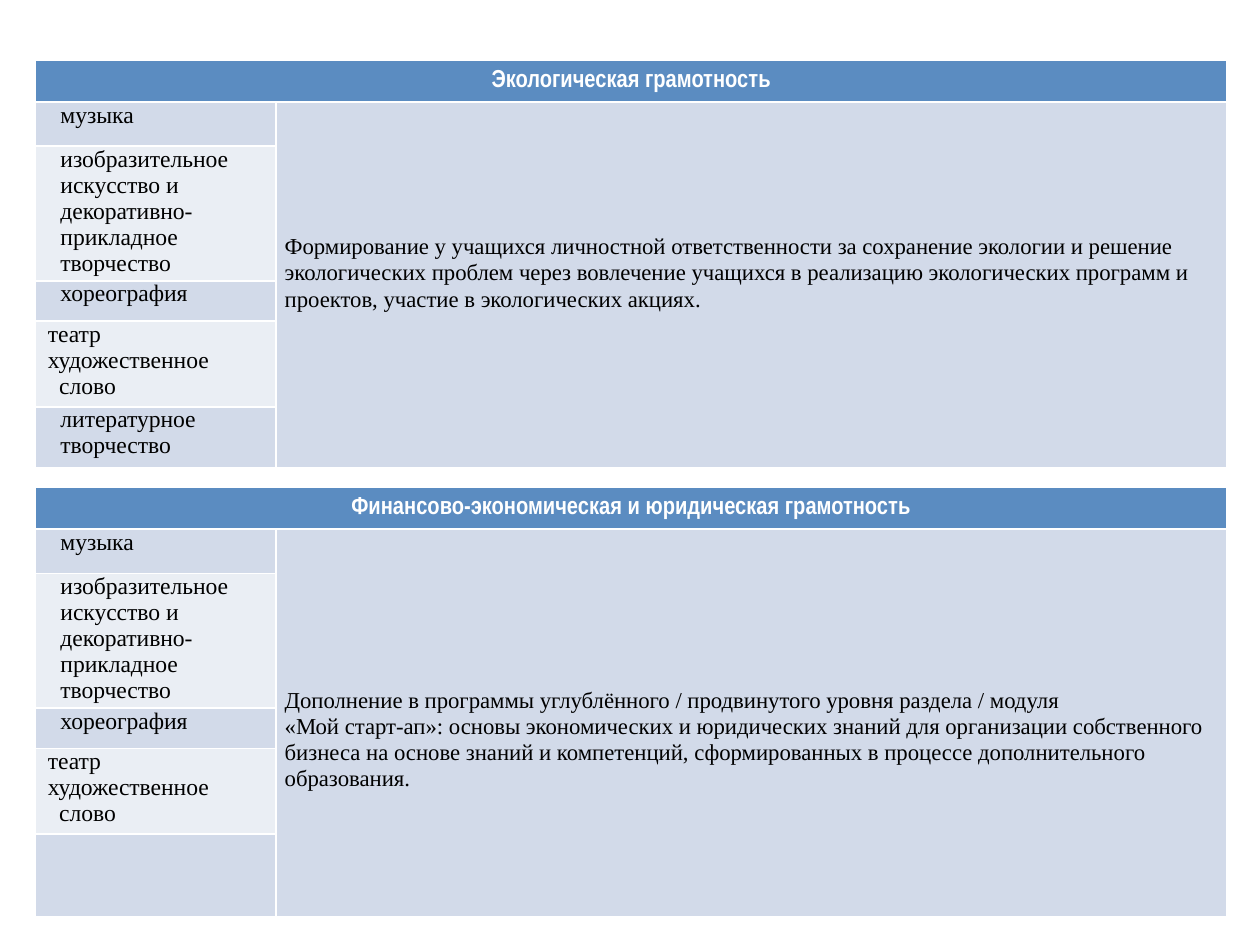
from pptx import Presentation
from pptx.dml.color import RGBColor
from pptx.enum.text import MSO_ANCHOR, PP_ALIGN
from pptx.util import Inches, Pt

CENTER, LEFT = PP_ALIGN.CENTER, PP_ALIGN.LEFT
TOP, MIDDLE = MSO_ANCHOR.TOP, MSO_ANCHOR.MIDDLE

COLORS = {
    "header": "5B8CC1",
    "dark_band": "D2DAE9",
    "light_band": "EAEEF4",
    "white": "FFFFFF",
    "black": "000000",
}
COLUMN_WIDTHS = [1.91, 7.55]
UPPER_ROWS = [0.33, 0.35, 1.07, 0.32, 0.68]
LINE = 15

MUSIC = [("музыка", 0.2)]
ART = [
    ("изобразительное искусство и", 0.2),
    ("декоративно-прикладное творчество", 0.2),
]
DANCE = [("хореография", 0.2)]
THEATRE = [("театр", 0.1), ("художественное", 0.1), ("слово", 0.19)]
LITERATURE = [("литературное творчество", 0.2)]
SUBJECTS = [MUSIC, ART, DANCE, THEATRE]

ECOLOGY = [
    "Формирование у учащихся личностной ответственности за сохранение экологии "
    "и решение экологических проблем через вовлечение учащихся в реализацию "
    "экологических программ и проектов, участие в экологических акциях."
]
FINANCE = [
    "Дополнение в программы углублённого / продвинутого уровня раздела / модуля",
    "«Мой старт-ап»: основы экономических и юридических знаний для организации "
    "собственного бизнеса на основе знаний и компетенций, сформированных в "
    "процессе дополнительного образования.",
]


def write(paragraph, text, size=13.5, font="Times New Roman", color="black",
          bold=False, align=LEFT, spacing=None):
    paragraph.alignment = align
    if spacing:
        paragraph.line_spacing = Pt(spacing)
    run = paragraph.add_run()
    run.text = text
    run.font.size = Pt(size)
    run.font.name = font
    run.font.bold = bold
    run.font.color.rgb = RGBColor.from_string(COLORS[color])


def paint(cell, color):
    cell.fill.solid()
    cell.fill.fore_color.rgb = RGBColor.from_string(COLORS[color])


def fill_cell(cell, lines, color, left=0, top=0, **text_format):
    paint(cell, color)
    cell.margin_left, cell.margin_top = Inches(left), Inches(top)
    cell.margin_right = cell.margin_bottom = 0
    cell.vertical_anchor = TOP
    frame = cell.text_frame
    for index, (text, indent) in enumerate(lines):
        paragraph = frame.add_paragraph() if index else frame.paragraphs[0]
        paragraph._p.get_or_add_pPr().set("marL", str(Inches(indent)))
        write(paragraph, text, **text_format)


def literacy_table(slide, left, top, width, last_row, heading, subjects, goals,
                   lines_above):
    row_heights = UPPER_ROWS + [last_row]
    table = slide.shapes.add_table(
        len(row_heights), len(COLUMN_WIDTHS), Inches(left), Inches(top),
        Inches(width), Inches(sum(row_heights))).table
    for column, column_width in zip(table.columns, COLUMN_WIDTHS):
        column.width = Inches(column_width)
    for row, height in zip(table.rows, row_heights):
        row.height = Inches(height)

    header = table.cell(0, 0)
    header.merge(table.cell(0, 1))
    paint(header, "header")
    header.vertical_anchor = MIDDLE
    write(header.text_frame.paragraphs[0], heading, size=14,
          font="Arial Narrow", color="white", bold=True, align=CENTER)

    for row in range(1, len(row_heights)):
        band = "dark_band" if row % 2 else "light_band"
        if row <= len(subjects):
            fill_cell(table.cell(row, 0), subjects[row - 1], band, spacing=14.9)
        else:
            paint(table.cell(row, 0), band)

    goal = table.cell(1, 1)
    goal.merge(table.cell(len(row_heights) - 1, 1))
    fill_cell(goal, [(text, 0) for text in goals], "dark_band", left=0.07,
              top=lines_above * LINE / 72, size=13, spacing=LINE)


def main():
    presentation = Presentation()
    presentation.slide_width, presentation.slide_height = Inches(10), Inches(7.5)
    slide = presentation.slides.add_slide(presentation.slide_layouts[6])
    literacy_table(slide, 0.28, 0.48, 9.46, 0.48, "Экологическая грамотность",
                   SUBJECTS + [LITERATURE], ECOLOGY, 5)
    literacy_table(slide, 0.28, 3.87, 9.46, 0.66,
                   "Финансово-экономическая и юридическая грамотность",
                   SUBJECTS, FINANCE, 6)
    presentation.save("out.pptx")


if __name__ == "__main__":
    main()
